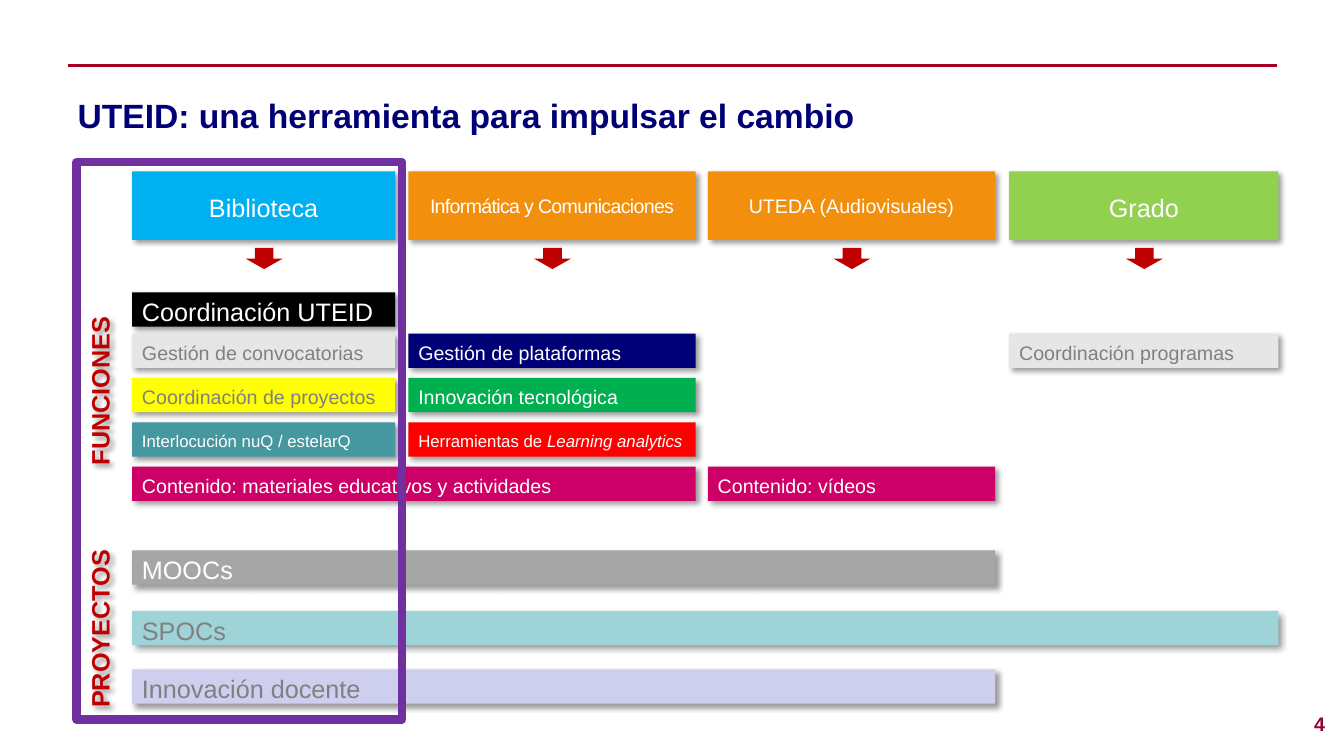
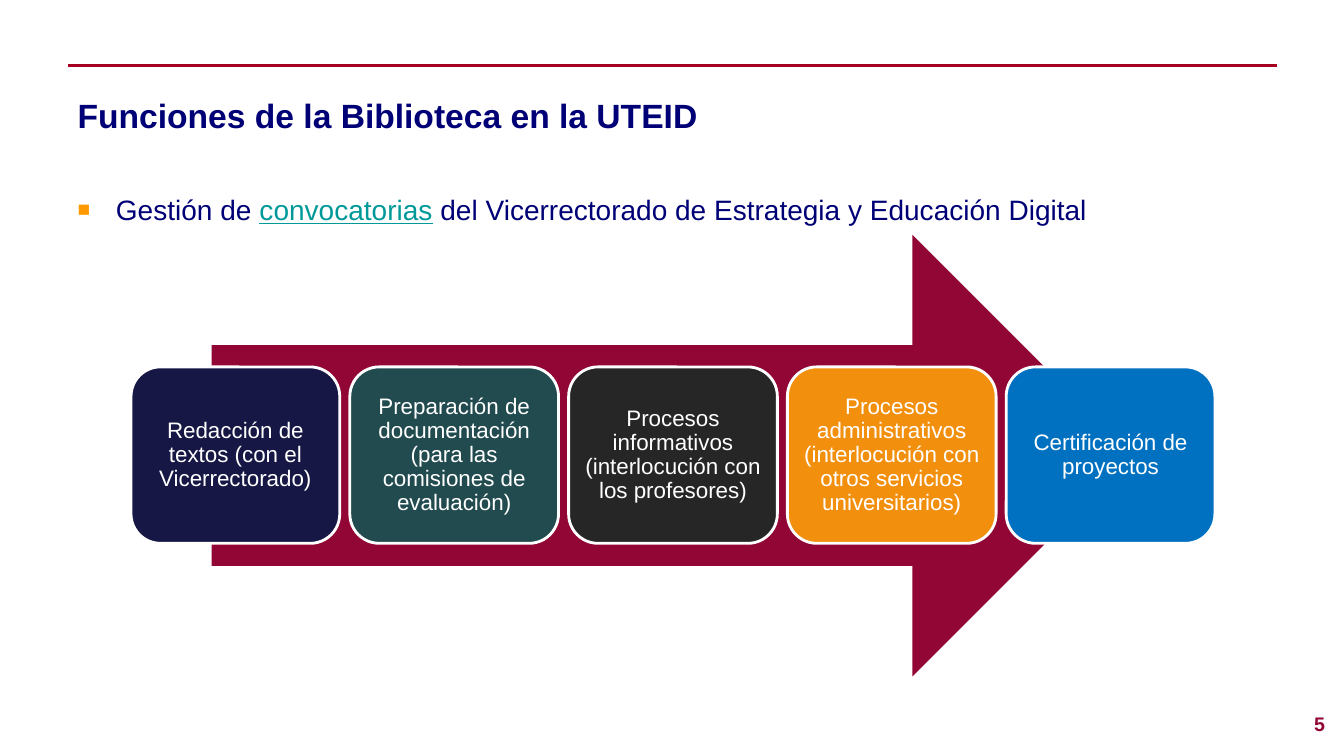
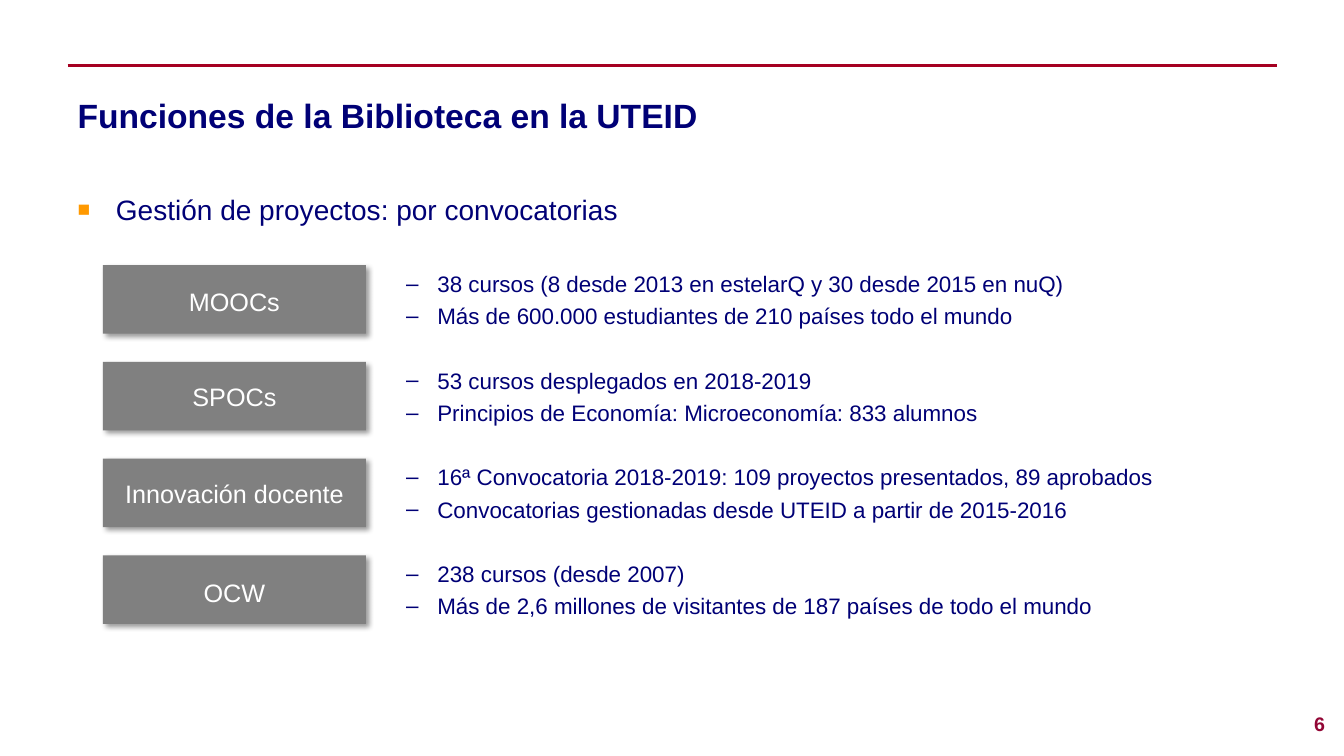
from lxml.etree import SubElement
from pptx import Presentation
from pptx.dml.color import RGBColor
from pptx.enum.shapes import MSO_CONNECTOR, MSO_SHAPE
from pptx.enum.text import MSO_ANCHOR, MSO_AUTO_SIZE, PP_ALIGN
from pptx.oxml.ns import qn
from pptx.util import Inches, Pt

COLORS = {
    "white": "FFFFFF", "black": "000000", "navy": "000076", "wine": "920635",
    "rule": "A50021", "bullet": "FF9900", "link": "009999", "red": "C00000",
    "sky": "00B0F0", "orange": "F2900E", "lime": "92D050", "gray": "808080",
    "silver": "A6A6A6", "pale": "E6E6E6", "yellow": "FFFF00", "teal": "4597A0",
    "aqua": "9ED3D7", "lilac": "CECEEF", "pink": "CC0066", "green": "00B050",
    "bright": "FF0000", "purple": "7030A0", "midnight": "171745",
    "pine": "224B50", "coal": "262626", "blue": "0070C0",
}
FONT = "Arial"
TITLE_ONLY, TITLE_BODY = 5, 1


def rgb(name):
    """Return the named colour."""
    return RGBColor.from_string(COLORS[name])


class Deck:
    """Holds the shared style and the slide being built."""

    def __init__(self):
        """Open an empty widescreen presentation."""
        self.prs = Presentation()
        self.prs.slide_width = Inches(13.33)
        self.prs.slide_height = Inches(7.5)
        self.s = None

    def slide(self, number, title, layout):
        """Start a slide with its number, rule and title."""
        self.s = self.prs.slides.add_slide(self.prs.slide_layouts[layout])
        sp = self.box(MSO_SHAPE.RECTANGLE, 12.34, 6.92, 0.9, 0.52, "white")
        self.label(sp, [(str(number), {"bold": True})], 14, "wine", PP_ALIGN.RIGHT)
        line = self.s.shapes.add_connector(
            MSO_CONNECTOR.STRAIGHT, Inches(0.67), Inches(0.65), Inches(12.67), Inches(0.65))
        line.line.color.rgb = rgb("rule")
        line.line.width = Pt(2)
        SubElement(line.element.spPr, qn("a:effectLst"))
        sp = self.place(self.s.shapes.title, 0.67, 0.68, 12, 0.93)
        self.label(sp, [(title, {"bold": True})], 24, "navy")

    def place(self, sp, left, top, width, height):
        """Move and size a placeholder."""
        sp.left, sp.top = Inches(left), Inches(top)
        sp.width, sp.height = Inches(width), Inches(height)
        return sp

    def runs(self, p, parts, size, color):
        """Add text to a paragraph run by run."""
        for text, style in parts:
            r = p.add_run()
            r.text = text
            r.font.name = FONT
            r.font.size = Pt(size)
            r.font.color.rgb = rgb(style.get("color", color))
            r.font.bold = style.get("bold", False)
            r.font.italic = style.get("italic", False)
            r.font.underline = style.get("underline", False)
            if "spacing" in style:
                r.font._element.set("spc", str(style["spacing"]))

    def label(self, sp, parts, size, color, align=PP_ALIGN.LEFT, spacing=None):
        """Put one vertically centred paragraph in a shape."""
        tf = sp.text_frame
        tf.word_wrap = True
        tf.auto_size = MSO_AUTO_SIZE.NONE
        tf.vertical_anchor = MSO_ANCHOR.MIDDLE
        p = tf.paragraphs[0]
        p.alignment = align
        if spacing:
            p.line_spacing = spacing
        self.runs(p, parts, size, color)

    def shade(self, sp):
        """Give a shape the soft lower-right shadow."""
        sp.shadow.inherit = False
        effects = sp.element.spPr.find(qn("a:effectLst"))
        shadow = SubElement(effects, qn("a:outerShdw"), blurRad=str(Pt(4)),
                            dist=str(Pt(3)), dir="2700000", algn="tl", rotWithShape="0")
        color = SubElement(shadow, qn("a:srgbClr"), val=COLORS["black"])
        SubElement(color, qn("a:alpha"), val="40000")

    def box(self, kind, left, top, width, height, fill=None, line=None, weight=1):
        """Draw a preset shape without shadow."""
        sp = self.s.shapes.add_shape(
            kind, Inches(left), Inches(top), Inches(width), Inches(height))
        sp.shadow.inherit = False
        if fill:
            sp.fill.solid()
            sp.fill.fore_color.rgb = rgb(fill)
        else:
            sp.fill.background()
        if line:
            sp.line.color.rgb = rgb(line)
            sp.line.width = Pt(weight)
        else:
            sp.line.fill.background()
        return sp

    def bar(self, parts, left, top, width, height, fill, size=14, color="white",
            align=PP_ALIGN.LEFT, spacing=1.15):
        """Draw a shadowed rectangle with a label."""
        sp = self.box(MSO_SHAPE.RECTANGLE, left, top, width, height, fill)
        self.shade(sp)
        self.label(sp, parts, size, color, align, spacing)

    def side_label(self, text, top):
        """Add a shadowed label that reads upwards."""
        sp = self.s.shapes.add_textbox(
            Inches(-0.34), Inches(top), Inches(2.61), Inches(0.68))
        sp.rotation = 270
        self.shade(sp)
        self.label(sp, [(text, {"bold": True})], 18, "red", PP_ALIGN.CENTER, 1.15)

    def bullet(self, p, char, margin, hang, color, percent):
        """Give a paragraph a hanging bullet."""
        pPr = p._p.get_or_add_pPr()
        pPr.set("marL", str(Inches(margin)))
        pPr.set("indent", str(-Inches(hang)))
        clr = SubElement(pPr, qn("a:buClr"))
        SubElement(clr, qn("a:srgbClr"), val=COLORS[color])
        SubElement(pPr, qn("a:buSzPct"), val=str(percent * 1000))
        SubElement(pPr, qn("a:buFont"), typeface=FONT)
        SubElement(pPr, qn("a:buChar"), char=char)

    def body(self, parts):
        """Fill the body placeholder with one bulleted line."""
        sp = self.place(self.s.placeholders[1], 0.67, 1.86, 12, 2.71)
        tf = sp.text_frame
        tf.auto_size = MSO_AUTO_SIZE.NONE
        p = tf.paragraphs[0]
        self.bullet(p, "■", 0.38, 0.38, "bullet", 75)
        p.space_before = Pt(0)
        self.runs(p, parts, 20, "navy")

    def dashes(self, lines, left, top, width, height):
        """Add a list with dashes."""
        sp = self.s.shapes.add_textbox(
            Inches(left), Inches(top), Inches(width), Inches(height))
        tf = sp.text_frame
        tf.word_wrap = True
        for i, line in enumerate(lines):
            p = tf.add_paragraph() if i else tf.paragraphs[0]
            p.level = 1
            self.bullet(p, "–", 0.81, 0.31, "navy", 100)
            p.space_before = Pt(3.8 if i else 0)
            self.runs(p, [(line, {})], 16, "navy")


def build_units(deck):
    """Build the chart of units, functions and projects."""
    deck.slide(4, "UTEID: una herramienta para impulsar el cambio", TITLE_ONLY)
    columns = [(1.31, 2.61), (4.05, 2.85), (7.02, 2.85), (10.01, 2.67)]
    units = [
        ("Biblioteca", "sky", 18, {}, 1.15),
        ("Informática y Comunicaciones", "orange", 14, {"spacing": -50}, None),
        ("UTEDA (Audiovisuales)", "orange", 14, {}, None),
        ("Grado", "lime", 18, {}, 1.15),
    ]
    for (left, width), (name, fill, size, style, spacing) in zip(columns, units):
        deck.bar([(name, style)], left, 1.7, width, 0.68, fill, size,
                 align=PP_ALIGN.CENTER, spacing=spacing)
        deck.box(MSO_SHAPE.DOWN_ARROW, left + width / 2 - 0.18, 2.46, 0.37, 0.21, "red")

    deck.side_label("FUNCIONES", 3.54)
    deck.side_label("PROYECTOS", 5.9)

    rows = [2.9] + [3.31 + 0.44 * i for i in range(4)] + [5.46, 6.06, 6.64]
    analytics = [("Herramientas de ", {}), ("Learning analytics", {"italic": True})]
    bars = [
        (0, 0, 0, [("Coordinación UTEID", {})], "black", 18, "white"),
        (1, 0, 0, [("Gestión de convocatorias", {})], "pale", 14, "gray"),
        (2, 0, 0, [("Coordinación de proyectos", {})], "yellow", 14, "gray"),
        (3, 0, 0, [("Interlocución nuQ / estelarQ", {})], "teal", 12, "white"),
        (4, 0, 1, [("Contenido: materiales educativos y actividades", {})],
         "pink", 14, "white"),
        (1, 1, 1, [("Gestión de plataformas", {})], "navy", 14, "white"),
        (2, 1, 1, [("Innovación tecnológica", {})], "green", 14, "white"),
        (3, 1, 1, analytics, "bright", 12, "white"),
        (4, 2, 2, [("Contenido: vídeos", {})], "pink", 14, "white"),
        (1, 3, 3, [("Coordinación programas", {})], "pale", 14, "gray"),
        (5, 0, 2, [("MOOCs", {})], "silver", 18, "white"),
        (6, 0, 3, [("SPOCs", {})], "aqua", 18, "gray"),
        (7, 0, 2, [("Innovación docente", {})], "lilac", 18, "gray"),
    ]
    for row, first, last, parts, fill, size, color in bars:
        left = columns[first][0]
        width = sum(columns[last]) - left
        deck.bar(parts, left, rows[row], width, 0.34, fill, size, color)
    deck.box(MSO_SHAPE.RECTANGLE, 0.76, 1.61, 3.23, 5.53, None, "purple", 6)


def build_process(deck):
    """Build the five steps over the broad arrow."""
    deck.slide(5, "Funciones de la Biblioteca en la UTEID", TITLE_BODY)
    deck.body([
        ("Gestión de ", {}),
        ("convocatorias", {"color": "link", "underline": True}),
        (" del Vicerrectorado de Estrategia y Educación Digital", {}),
    ])
    deck.box(MSO_SHAPE.RIGHT_ARROW, 2.1, 2.33, 9.14, 4.38, "wine")
    steps = [
        ("Redacción de textos (con el Vicerrectorado)", "midnight"),
        ("Preparación de documentación (para las comisiones de evaluación)", "pine"),
        ("Procesos informativos (interlocución con los profesores)", "coal"),
        ("Procesos administrativos (interlocución con otros servicios universitarios)",
         "orange"),
        ("Certificación de proyectos", "blue"),
    ]
    for i, (text, fill) in enumerate(steps):
        sp = deck.box(MSO_SHAPE.ROUNDED_RECTANGLE, 1.3 + 2.17 * i, 3.64, 2.07, 1.75,
                      fill, "white", 2)
        tf = sp.text_frame
        tf.margin_left = tf.margin_right = Inches(0.07)
        tf.margin_top = tf.margin_bottom = Inches(0.07)
        deck.label(sp, [(text, {})], 16, "white", PP_ALIGN.CENTER, 0.9)


def build_projects(deck):
    """Build the list of projects with their figures."""
    deck.slide(6, "Funciones de la Biblioteca en la UTEID", TITLE_BODY)
    deck.body([("Gestión de proyectos: por convocatorias", {})])
    projects = [
        ("MOOCs", 1.15, ["38 cursos (8 desde 2013 en estelarQ y 30 desde 2015 en nuQ)",
                         "Más de 600.000 estudiantes de 210 países todo el mundo"]),
        ("SPOCs", None, ["53 cursos desplegados en 2018-2019",
                         "Principios de Economía: Microeconomía: 833 alumnos"]),
        ("Innovación docente", None,
         ["16ª Convocatoria 2018-2019: 109 proyectos presentados, 89 aprobados",
          "Convocatorias gestionadas desde UTEID a partir de 2015-2016"]),
        ("OCW", 1.15, ["238 cursos (desde 2007)",
                       "Más de 2,6 millones de visitantes de 187 países de todo el mundo"]),
    ]
    for i, (name, spacing, lines) in enumerate(projects):
        top = 2.63 + 0.96 * i
        deck.bar([(name, {})], 1.02, top, 2.61, 0.68, "gray", 18,
                 align=PP_ALIGN.CENTER, spacing=spacing)
        deck.dashes(lines, 3.43, top, 9.23, 0.68)


def main():
    """Build and save the presentation."""
    deck = Deck()
    build_units(deck)
    build_process(deck)
    build_projects(deck)
    deck.prs.save("out.pptx")


if __name__ == "__main__":
    main()
